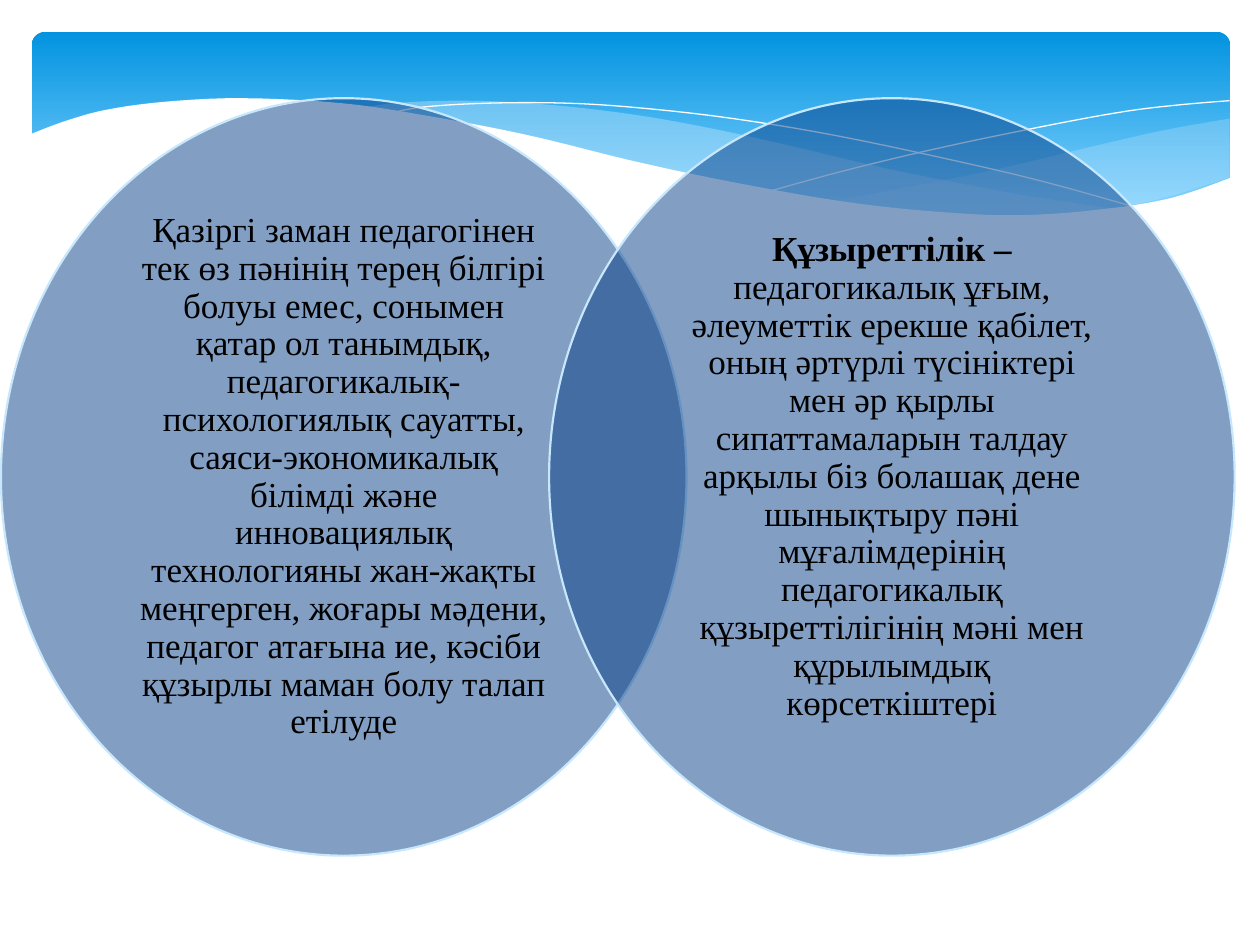
from dataclasses import dataclass

from lxml import etree
from pptx import Presentation
from pptx import util as u
from pptx.dml.color import RGBColor
from pptx.enum import shapes, text
from pptx.oxml import ns


@dataclass(frozen=True)
class Theme:
    font: str = "Times New Roman"
    size: int = 20
    ink: str = "000000"
    white: str = "FFFFFF"
    sky: str = "0293E0"
    light: str = "83D3FE"
    pale: str = "C6E7FC"
    navy: str = "073E87"


THEME = Theme()

# Wave edges as key points in cm
HAZES = [
    (29, [
        [(24.79, 2.39), (23.39, 2.64), (21.87, 2.99), (19.79, 3.48),
         (16.79, 4.06)],
        [(16.79, 4.06), (18.59, 4.24), (20.12, 4.37), (21.21, 4.34),
         (22.15, 4.24), (23.39, 4.01), (24.79, 3.58)],
    ]),
    (40, [
        [(22.68, 4.24), (20.5, 3.91), (17.93, 3.41), (15.98, 2.95),
         (14.1, 2.54), (12.42, 2.26), (10.67, 2.08), (9.17, 2.03),
         (7.95, 2.08), (7.26, 2.18)],
        [(7.26, 2.18), (9.19, 2.46), (11.4, 2.95), (14.38, 3.63),
         (16.89, 4.09), (19.05, 4.32), (21.03, 4.39), (22.68, 4.24)],
    ]),
]
THREADS = [
    [(7.85, 2.29), (8.51, 2.16), (9.83, 2.08), (11.43, 2.08), (12.95, 2.18),
     (14.78, 2.39), (16.89, 2.74), (19.3, 3.25), (21.11, 3.68),
     (23.04, 4.22)],
    [(15.57, 3.84), (17.07, 3.43), (19, 2.97), (21.23, 2.51), (22.73, 2.24),
     (23.83, 2.11), (24.79, 2.03)],
]
CREST = [
    (24.82, 3.58), (23.62, 3.99), (22.22, 4.22), (20.55, 4.34), (18.9, 4.27),
    (16.97, 4.06), (14.71, 3.66), (12.78, 3.25), (10.62, 2.72), (8.64, 2.34),
    (6.88, 2.08), (4.9, 1.98), (3.35, 2.05), (2.16, 2.21), (1.32, 2.44),
    (0.58, 2.72),
]
BASE = [(0.58, 5.69), (24.82, 5.69)]

# Each circle holds runs of (wording, bold)
CIRCLES = [
    [("Қазіргі заман педагогінен тек өз пəнінің терең білгірі болуы емес, "
      "сонымен қатар ол танымдық, педагогикалық-психологиялық сауатты, "
      "саяси-экономикалық білімді жəне инновациялық технологияны жан-жақты "
      "меңгерген, жоғары мəдени, педагог атағына ие, кəсіби құзырлы маман "
      "болу талап етілуде", False)],
    [("Құзыреттілік – ", True),
     ("педагогикалық ұғым, əлеуметтік ерекше қабілет, оның əртүрлі "
      "түсініктері мен əр қырлы сипаттамаларын талдау арқылы біз болашақ "
      "дене шынықтыру пəні мұғалімдерінің педагогикалық құзыреттілігінің "
      "мəні мен құрылымдық көрсеткіштері", False)],
]
LEFT, TOP, WIDE, HIGH, STEP = 0.02, 1.98, 13.82, 15.27, 11.05


def rgb(code):
    return RGBColor.from_string(code)


def smooth(keys, steps=5):
    """Points of a Catmull-Rom curve through the keys."""
    ends = [keys[0], *keys, keys[-1]]
    curve = [keys[0]]
    for a, b, c, d in zip(ends, ends[1:], ends[2:], ends[3:]):
        for i in range(1, steps + 1):
            t = i / steps
            curve.append(tuple(
                (2 * q + (r - p) * t + (2 * p - 5 * q + 4 * r - s) * t ** 2
                 + (3 * q - p - 3 * r + s) * t ** 3) / 2
                for p, q, r, s in zip(a, b, c, d)))
    return curve


def paint(shape, fill=None, alpha=100, line=None, width=0):
    shape.shadow.inherit = False
    if fill:
        shape.fill.solid()
        shape.fill.fore_color.rgb = rgb(fill)
        if alpha < 100:
            tint = shape.fill._xPr.find(".//" + ns.qn("a:srgbClr"))
            etree.SubElement(tint, ns.qn("a:alpha"), val=str(alpha * 1000))
    else:
        shape.fill.background()
    if line:
        shape.line.color.rgb = rgb(line)
        shape.line.width = u.Pt(width)
    else:
        shape.line.fill.background()


def add_band(slide):
    band = slide.shapes.add_shape(
        shapes.MSO_SHAPE.ROUNDED_RECTANGLE,
        u.Cm(0.64), u.Cm(0.64), u.Cm(24.16), u.Cm(3.96))
    band.adjustments[0] = 0.07
    paint(band)
    band.fill.gradient()
    band.fill.gradient_angle = 270
    looks = [(0, THEME.sky), (0.9, THEME.light)]
    for stop, (place, code) in zip(band.fill.gradient_stops, looks):
        stop.position = place
        stop.color.rgb = rgb(code)


def add_wave(slide, points, close=True, **look):
    spots = [(u.Cm(x), u.Cm(y)) for x, y in points]
    build = slide.shapes.build_freeform(*spots[0])
    build.add_line_segments(spots[1:], close=close)
    paint(build.convert_to_shape(), **look)


def add_circle(slide, left):
    disc = slide.shapes.add_shape(
        shapes.MSO_SHAPE.OVAL, u.Cm(left), u.Cm(TOP), u.Cm(WIDE), u.Cm(HIGH))
    paint(disc, THEME.navy, 50, THEME.pale, 1.25)


def add_label(slide, left, runs):
    # The box is the rectangle inscribed in the circle
    wide, high = WIDE * 0.707, HIGH * 0.707
    box = slide.shapes.add_textbox(
        u.Cm(left + (WIDE - wide) / 2), u.Cm(TOP + (HIGH - high) / 2),
        u.Cm(wide), u.Cm(high))
    frame = box.text_frame
    frame.word_wrap = True
    frame.vertical_anchor = text.MSO_ANCHOR.MIDDLE
    frame.margin_left = frame.margin_right = u.Cm(0.76)
    frame.margin_top = frame.margin_bottom = u.Cm(0.08)
    para = frame.paragraphs[0]
    para.alignment = text.PP_ALIGN.CENTER
    para.line_spacing = 0.9
    para.font.name = THEME.font
    para.font.size = u.Pt(THEME.size)
    para.font.color.rgb = rgb(THEME.ink)
    for words, bold in runs:
        run = para.add_run()
        run.text = words
        run.font.bold = bold


def main():
    deck = Presentation()
    deck.slide_width, deck.slide_height = u.Cm(25.4), u.Cm(19.05)
    slide = deck.slides.add_slide(deck.slide_layouts[6])

    # Header band with its waves
    add_band(slide)
    for alpha, edges in HAZES:
        outline = [spot for edge in edges for spot in smooth(edge)]
        add_wave(slide, outline, fill=THEME.pale, alpha=alpha)
    for thread in THREADS:
        add_wave(slide, smooth(thread), close=False, line=THEME.white)
    add_wave(slide, smooth(CREST) + BASE, fill=THEME.white)

    # Overlapping circles with their texts
    for i, runs in enumerate(CIRCLES):
        left = LEFT + i * STEP
        add_circle(slide, left)
        add_label(slide, left, runs)

    deck.save("out.pptx")


if __name__ == "__main__":
    main()
